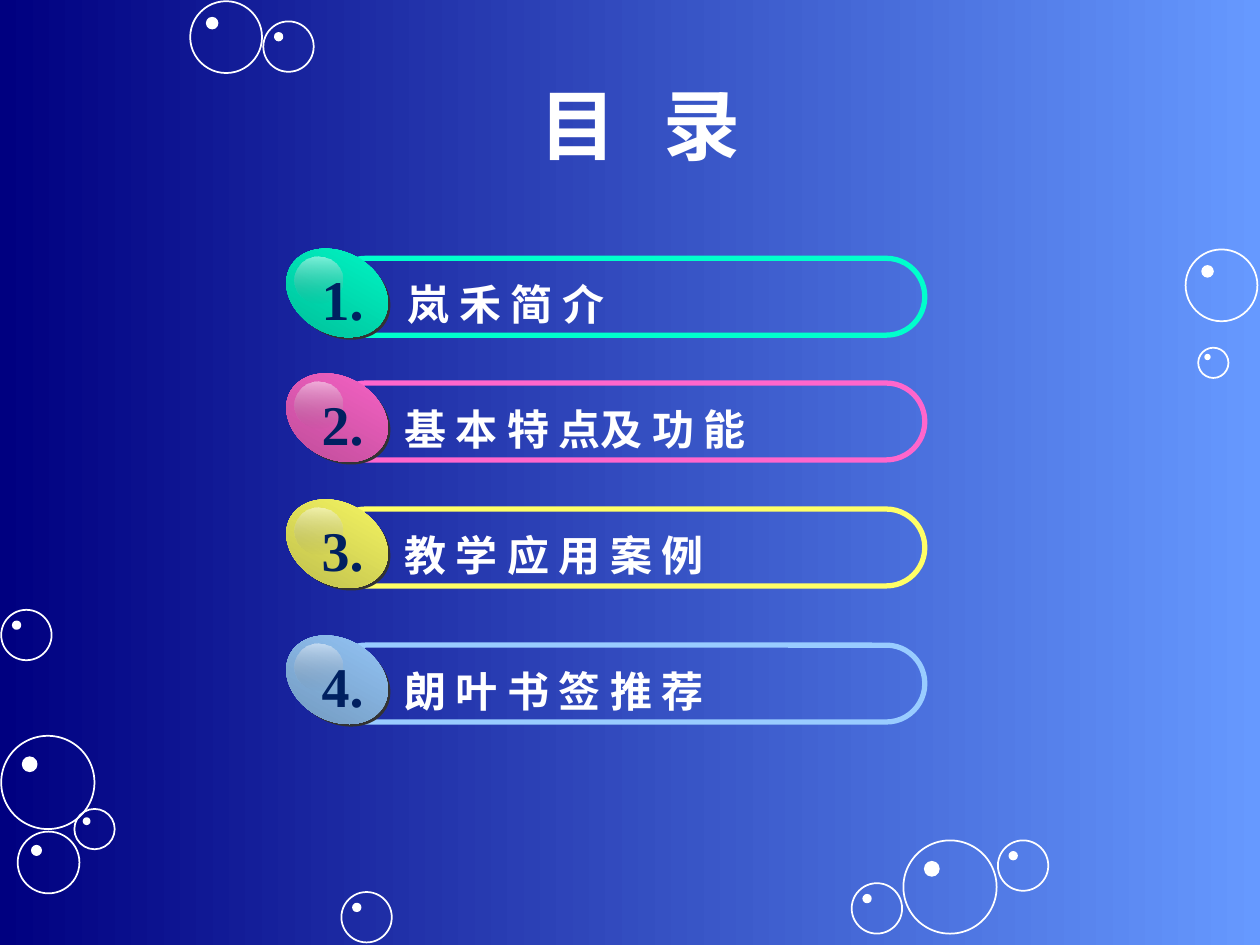
from lxml import etree
from pptx import Presentation
from pptx.dml.color import RGBColor
from pptx.enum.shapes import MSO_SHAPE as Shape
from pptx.enum.text import MSO_ANCHOR as Anchor, MSO_AUTO_SIZE as AutoSize, PP_ALIGN as Align
from pptx.oxml.ns import qn
from pptx.util import Inches, Pt

FONT = "Times New Roman"
WHITE, NAVY, SHADOW = "FFFFFF", "002060", "333333"
ROW_LEFT = 2.25

# Left, top, diameter
BUBBLES = [
    (0.01, 5.84, 0.74), (0.59, 6.42, 0.32), (0.14, 6.6, 0.49),
    (2.71, 7.08, 0.4), (0.01, 4.84, 0.4),
    (7.17, 6.67, 0.74), (6.76, 7.01, 0.4), (7.92, 6.67, 0.4),
    (9.41, 1.98, 0.57), (9.51, 2.76, 0.24),
    (1.51, 0.01, 0.57), (2.09, 0.17, 0.4),
]

# Top, label, label width, label alignment, light colour, dark colour
ROWS = [
    (2, "岚 禾 简 介", 1.81, Align.CENTER, "00FFCC", "00B692"),
    (2.99, "基 本 特 点及 功 能", 2.99, Align.LEFT, "FF66CC", "B64992"),
    (3.99, "教 学 应 用 案 例", 2.65, Align.LEFT, "FFFF66", "B6B649"),
    (5.07, "朗 叶 书 签 推 荐", 2.65, Align.LEFT, "99CCFF", "6D92B6"),
]


def color(value):
    return RGBColor.from_string(value)


def set_gradient(fill, start, end, angle):
    fill.gradient()
    fill.gradient_angle = angle
    for stop, value in zip(fill.gradient_stops, (start, end)):
        stop.color.rgb = color(value)


def set_gradient_opacity(shape, percentages):
    stops = shape.fill._xPr.iter(qn("a:srgbClr"))
    for stop, percentage in zip(stops, percentages):
        etree.SubElement(stop, qn("a:alpha")).set("val", str(percentage * 1000))


def add_shape(shapes, kind, left, top, width, height, fill=None, line=None, weight=1):
    shape = shapes.add_shape(kind, Inches(left), Inches(top), Inches(width), Inches(height))
    shape.shadow.inherit = False
    if fill:
        shape.fill.solid()
        shape.fill.fore_color.rgb = color(fill)
    else:
        shape.fill.background()
    if line:
        shape.line.color.rgb = color(line)
        shape.line.width = Pt(weight)
    else:
        shape.line.fill.background()
    return shape


def add_run(paragraph, text, size, text_color):
    run = paragraph.add_run()
    run.text = text
    run.font.name = FONT
    run.font.size = Pt(size)
    run.font.bold = True
    run.font.color.rgb = color(text_color)
    return run


def add_text(shapes, left, top, width, height, text, size, text_color, align):
    box = shapes.add_textbox(Inches(left), Inches(top), Inches(width), Inches(height))
    frame = box.text_frame
    frame.word_wrap = False
    frame.auto_size = AutoSize.SHAPE_TO_FIT_TEXT
    paragraph = frame.paragraphs[0]
    paragraph.alignment = align
    add_run(paragraph, text, size, text_color)


def add_bubble(slide, left, top, diameter):
    shapes = slide.shapes.add_group_shape().shapes
    add_shape(shapes, Shape.OVAL, left, top, diameter, diameter, line=WHITE)
    # Glint at the upper left, in proportion to the bubble
    offset, glint = 0.23 * diameter, 0.15 * diameter
    add_shape(shapes, Shape.OVAL, left + offset, top + offset, glint, glint, WHITE, WHITE)


def add_title(slide, left, top, width, height):
    box = slide.shapes.add_textbox(Inches(left), Inches(top), Inches(width), Inches(height))
    frame = box.text_frame
    frame.word_wrap = True
    frame.vertical_anchor = Anchor.MIDDLE
    paragraph = frame.paragraphs[0]
    paragraph.alignment = Align.CENTER
    add_run(paragraph, "目", 44, WHITE)
    gap = add_run(paragraph, " ", 44, WHITE)
    gap.font._element.set("spc", "1700")  # widens the gap between the two characters
    add_run(paragraph, "录", 44, WHITE)


def add_contents_row(slide, left, top, number, label, label_width, align, light, dark):
    shapes = slide.shapes.add_group_shape().shapes
    # Outlined pill
    pill = add_shape(shapes, Shape.ROUNDED_RECTANGLE, left + 0.35, top + 0.05, 4.74, 0.61,
                     line=light, weight=3)
    pill.adjustments[0] = 0.5
    # Tilted button over its shadow
    shadow = add_shape(shapes, Shape.OVAL, left + 0.02, top + 0.02, 0.85, 0.65, SHADOW)
    button = add_shape(shapes, Shape.OVAL, left, top, 0.85, 0.65)
    set_gradient(button.fill, light, dark, 270)
    shadow.rotation = button.rotation = 29.3
    # Translucent highlight
    highlight = add_shape(shapes, Shape.OVAL, left + 0.09, top + 0.04, 0.38, 0.37)
    set_gradient(highlight.fill, WHITE, "767676", 270)
    set_gradient_opacity(highlight, (50, 0))
    # Label and number
    add_text(shapes, left + 0.86, top + 0.16, label_width, 0.51, label, 24, WHITE, align)
    add_text(shapes, left + 0.2, top + 0.05, 0.54, 0.64, f"{number}.", 32, NAVY, Align.CENTER)


def main():
    presentation = Presentation()
    presentation.slide_width = Inches(10)
    presentation.slide_height = Inches(7.5)
    slide = presentation.slides.add_slide(presentation.slide_layouts[6])
    set_gradient(slide.background.fill, "000080", "6699FF", 0)

    for bubble in BUBBLES:
        add_bubble(slide, *bubble)
    for number, (top, *details) in enumerate(ROWS, start=1):
        add_contents_row(slide, ROW_LEFT, top, number, *details)
    add_title(slide, 0.83, 0.36, 8.5, 1.25)

    presentation.save("out.pptx")


if __name__ == "__main__":
    main()
